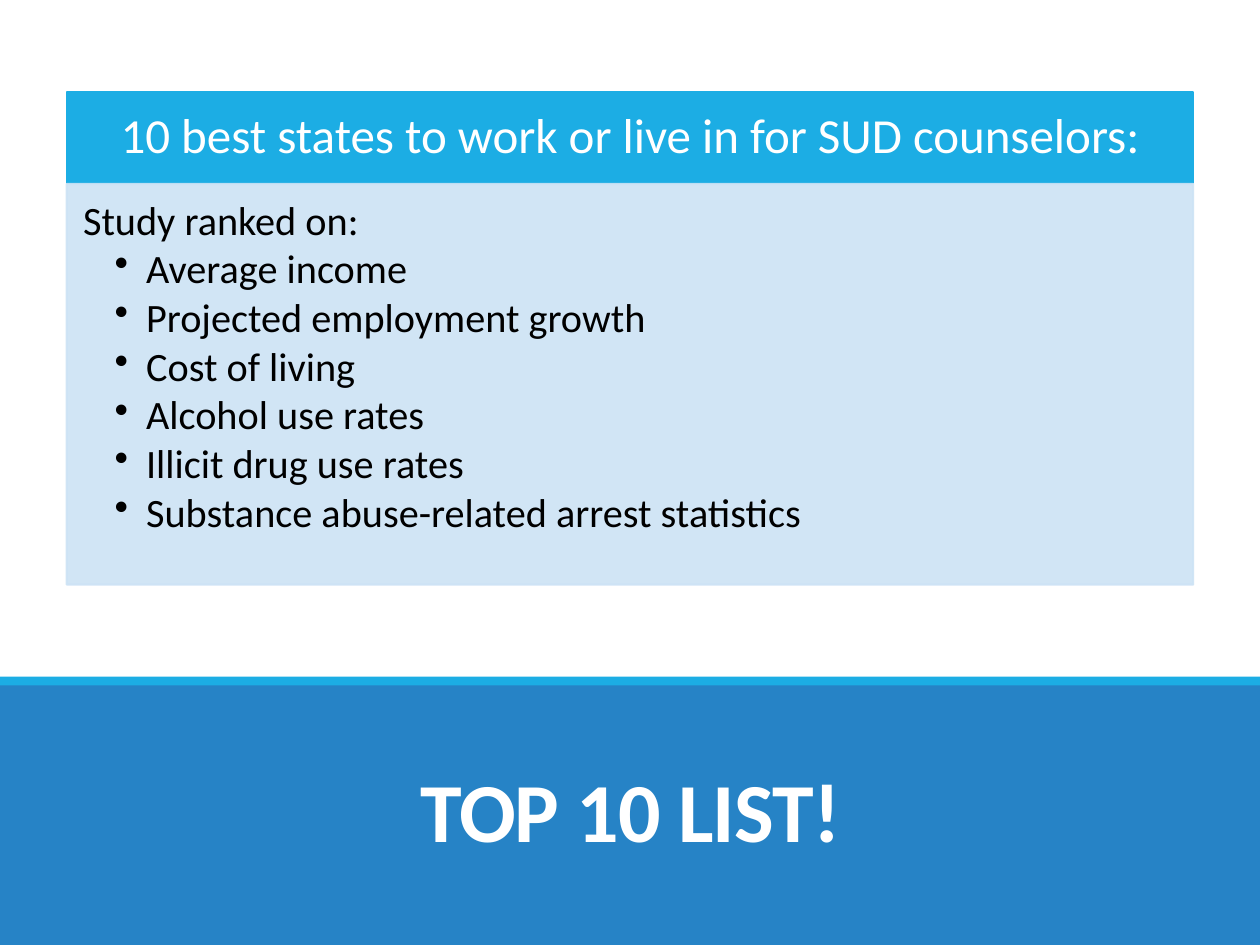
from lxml import etree
from pptx import Presentation
from pptx.dml.color import RGBColor
from pptx.enum import shapes, text
from pptx.oxml.ns import qn
from pptx.util import Inches, Pt

TITLE = "TOP 10 LIST!"
HEADING = "10 best states to work or live in for SUD counselors:"
INTRO = "Study ranked on:"
CRITERIA = [
    "Average income",
    "Projected employment growth",
    "Cost of living",
    "Alcohol use rates",
    "Illicit drug use rates",
    "Substance abuse-related arrest statistics",
]

BLUE = RGBColor(0x26, 0x83, 0xC6)
CYAN = RGBColor(0x1C, 0xAD, 0xE4)
PALE = RGBColor(0xCD, 0xE3, 0xF5)
WHITE = RGBColor(0xFF, 0xFF, 0xFF)
BLACK = RGBColor(0, 0, 0)

WIDTH, HEIGHT = 10, 7.5
BAND_TOP, STRIPE_TOP, STRIPE_HEIGHT = 5.42, 5.37, 0.07
CARD_LEFT, CARD_TOP, CARD_WIDTH = 0.53, 0.73, 8.94
HEADING_HEIGHT, BODY_TOP, BODY_HEIGHT = 0.72, 1.46, 3.18
INDENT = 0.25


def add_bar(slide, box, fill, outlined=False):
    bar = slide.shapes.add_shape(shapes.MSO_SHAPE.RECTANGLE, *map(Inches, box))
    bar.shadow.inherit = False
    bar.fill.solid()
    bar.fill.fore_color.rgb = fill
    if outlined:
        bar.line.color.rgb = fill
        bar.line.width = Pt(1.25)
    else:
        bar.line.fill.background()
    return bar


def set_frame(frame, insets, anchor):
    frame.word_wrap = True
    frame.vertical_anchor = anchor
    (frame.margin_left, frame.margin_top,
     frame.margin_right, frame.margin_bottom) = map(Inches, insets)


def style(paragraph, size, color, align, spacing=0.9, after=0, bold=False):
    paragraph.alignment = align
    paragraph.line_spacing = spacing
    paragraph.space_after = Pt(after)
    font = paragraph.font
    font.name, font.size, font.bold = "Calibri", Pt(size), bold
    font.color.rgb = color


def set_indent(paragraph, left, bullet=None):
    properties = paragraph._p.get_or_add_pPr()
    properties.set("marL", str(Inches(left)))
    properties.set("indent", str(-Inches(INDENT)))
    if bullet:
        etree.SubElement(properties, qn("a:buChar"), char=bullet)
    else:
        etree.SubElement(properties, qn("a:buNone"))


def main():
    deck = Presentation()
    deck.slide_width, deck.slide_height = Inches(WIDTH), Inches(HEIGHT)
    slide = deck.slides.add_slide(deck.slide_layouts[6])
    center, left = text.PP_ALIGN.CENTER, text.PP_ALIGN.LEFT

    add_bar(slide, (0, BAND_TOP, WIDTH, HEIGHT - BAND_TOP), BLUE)
    title = slide.shapes.add_textbox(*map(Inches, (0.88, 5.74, 8.25, 1.13))).text_frame
    set_frame(title, (0.1, 0.05, 0.1, 0.05), text.MSO_ANCHOR.BOTTOM)
    title.text = TITLE
    style(title.paragraphs[0], 48, WHITE, center, spacing=0.85, bold=True)
    title.paragraphs[0].runs[0].font._element.set("spc", "-50")
    add_bar(slide, (0, STRIPE_TOP, WIDTH, STRIPE_HEIGHT), CYAN)

    heading = add_bar(slide, (CARD_LEFT, CARD_TOP, CARD_WIDTH, HEADING_HEIGHT),
                      CYAN, outlined=True).text_frame
    set_frame(heading, (0.22, 0.12, 0.22, 0.12), text.MSO_ANCHOR.MIDDLE)
    heading.text = HEADING
    style(heading.paragraphs[0], 28, WHITE, center)

    card = add_bar(slide, (CARD_LEFT, BODY_TOP, CARD_WIDTH, BODY_HEIGHT),
                   PALE, outlined=True)
    for color in card._element.spPr.iter(qn("a:srgbClr")):
        etree.SubElement(color, qn("a:alpha"), val="90000")
    body = card.text_frame
    set_frame(body, (0.13, 0.13, 0.18, 0.2), text.MSO_ANCHOR.TOP)
    body.text = "\n".join([INTRO, *CRITERIA])
    for index, paragraph in enumerate(body.paragraphs):
        if index:
            paragraph.level = 2
            set_indent(paragraph, 2 * INDENT, "•")
        else:
            paragraph.level = 1
            set_indent(paragraph, INDENT)
        style(paragraph, 23, BLACK, left, after=3)

    deck.save("out.pptx")


if __name__ == "__main__":
    main()
